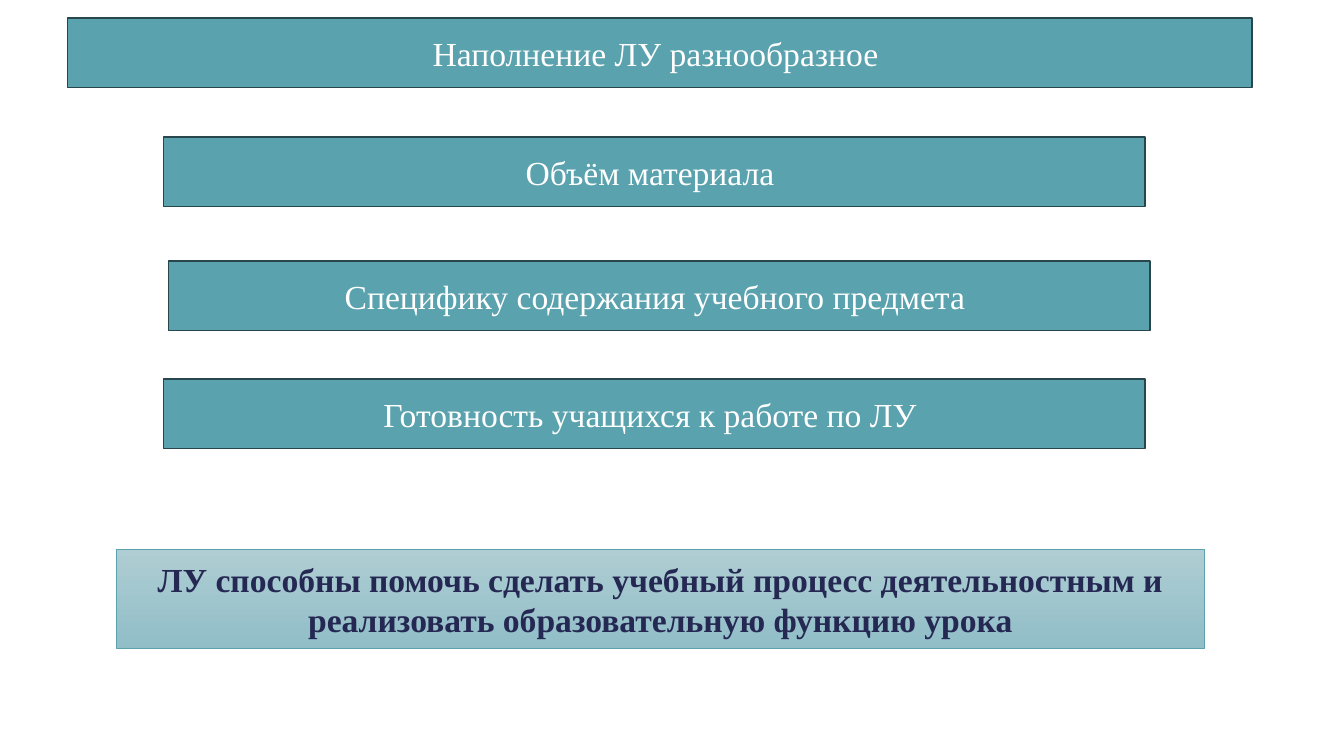
"""Build a slide on what the content of an ЛУ depends on and what it helps achieve."""
import pptx
import pptx.dml.color
import pptx.enum.shapes
import pptx.enum.text
import pptx.util

Pt = pptx.util.Pt
RGBColor = pptx.dml.color.RGBColor

TEAL = RGBColor(0x5A, 0xA2, 0xAE)
DARK_TEAL = RGBColor(0x27, 0x47, 0x4C)
PALE_TOP = RGBColor(0xAF, 0xCD, 0xD3)
PALE_BOTTOM = RGBColor(0x91, 0xBE, 0xC7)
NAVY = RGBColor(0x24, 0x28, 0x52)
WHITE = RGBColor(0xFF, 0xFF, 0xFF)

BAR_HEIGHT = 49.68
FACTOR_WIDTH = 701.28


def write_text(box, text, color=WHITE, bold=False):
    frame = box.text_frame
    frame.word_wrap = True
    frame.auto_size = pptx.enum.text.MSO_AUTO_SIZE.NONE
    frame.vertical_anchor = pptx.enum.text.MSO_ANCHOR.MIDDLE
    para = frame.paragraphs[0]
    para.alignment = pptx.enum.text.PP_ALIGN.CENTER
    span = para.add_run()
    span.text = text
    span.font.name = "Times New Roman"
    span.font.size = Pt(24)
    span.font.bold = bold
    span.font.color.rgb = color


deck = pptx.Presentation()
deck.slide_width = Pt(960)
deck.slide_height = Pt(540)
page = deck.slides.add_slide(deck.slide_layouts[5])

heading = page.shapes.title
heading.left, heading.top = Pt(48.24), Pt(12.96)
heading.width, heading.height = Pt(846), Pt(BAR_HEIGHT)
write_text(heading, "Наполнение ЛУ разнообразное ")

bars = [heading]
factors = [
    ("Объём материала ", 116.64, 97.92),
    ("Специфику содержания учебного предмета ", 120.24, 186.48),
    ("Готовность учащихся к работе по ЛУ ", 116.64, 270.72),
]
for text, left, top in factors:
    factor = page.shapes.add_shape(
        pptx.enum.shapes.MSO_SHAPE.RECTANGLE,
        Pt(left), Pt(top), Pt(FACTOR_WIDTH), Pt(BAR_HEIGHT))
    factor.shadow.inherit = False
    write_text(factor, text)
    bars.append(factor)

for bar in bars:
    bar.fill.solid()
    bar.fill.fore_color.rgb = TEAL
    bar.line.color.rgb = DARK_TEAL
    bar.line.width = Pt(1)

conclusion = page.shapes.add_shape(
    pptx.enum.shapes.MSO_SHAPE.RECTANGLE,
    Pt(83.16), Pt(392.4), Pt(776.88), Pt(70.56))
conclusion.shadow.inherit = False
conclusion.fill.gradient()
conclusion.fill.gradient_angle = 270
for stop, color in zip(conclusion.fill.gradient_stops, (PALE_TOP, PALE_BOTTOM)):
    stop.color.rgb = color
conclusion.line.color.rgb = TEAL
conclusion.line.width = Pt(0.5)
write_text(
    conclusion,
    "ЛУ способны помочь сделать учебный процесс деятельностным и "
    "реализовать образовательную функцию урока",
    color=NAVY, bold=True)

deck.save("out.pptx")
